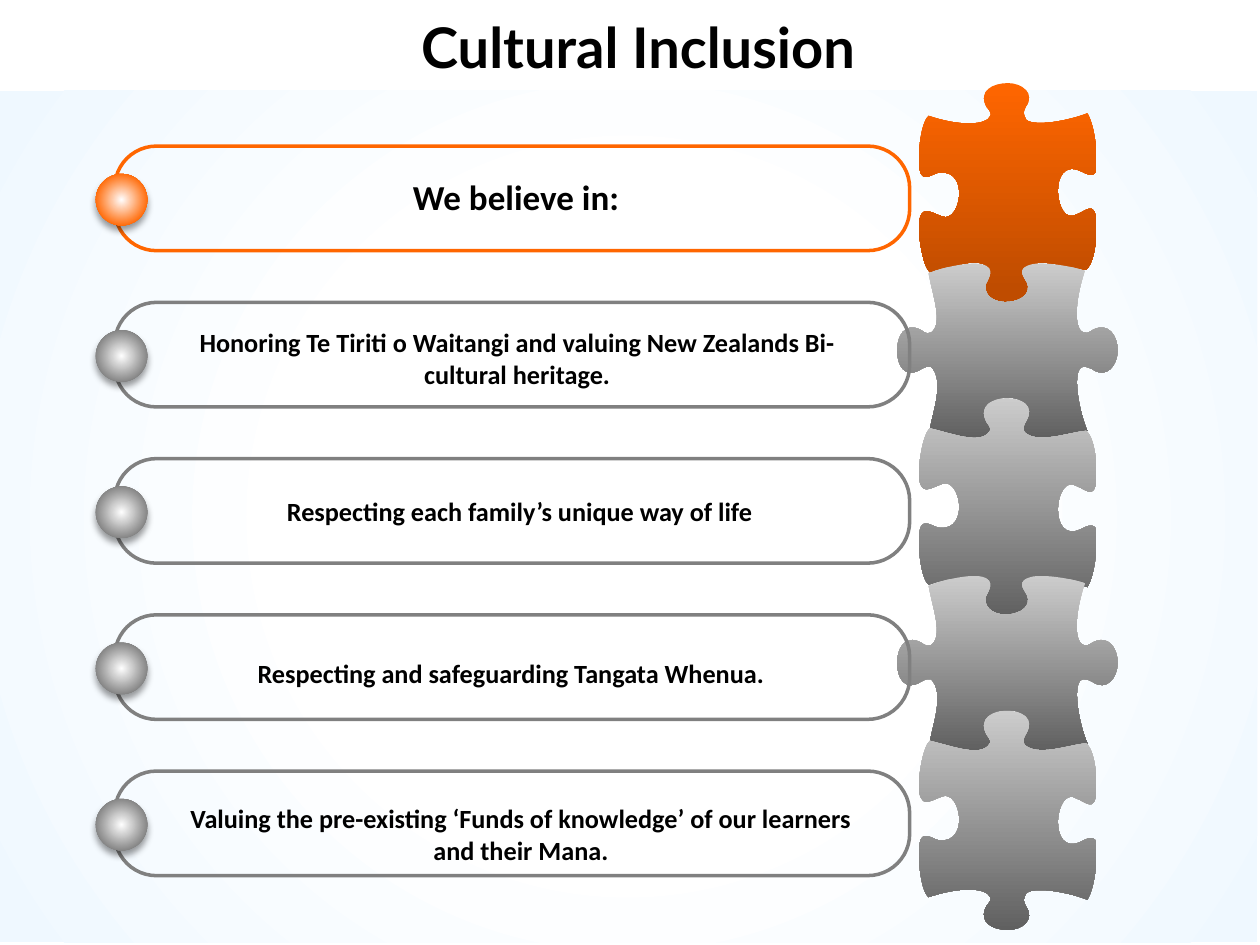
import pptx
import pptx.util
import pptx.oxml
import pptx.oxml.ns
import pptx.dml.color
import pptx.enum.shapes
import pptx.enum.text

KIND = pptx.enum.shapes.MSO_SHAPE
NS = 'xmlns:a="http://schemas.openxmlformats.org/drawingml/2006/main"'
ORANGE, GRAY = "FF6600", "808080"
PITCH = 1.24  # inches between rows

TITLE = "Cultural Inclusion"
# text, size, accent, text box left, top, height (inches)
ROWS = [
    ("We believe in:", 20, ORANGE, 1.19, 1.34, 0.44),
    ("Honoring Te Tiriti o Waitangi and valuing New Zealands Bi-cultural heritage.",
     15, GRAY, 1.2, 2.54, 0.61),
    ("Respecting each family’s unique way of life", 15, GRAY, 1.22, 3.88, 0.35),
    ("Respecting and safeguarding Tangata Whenua.", 15, GRAY, 1.15, 5.17, 0.61),
    ("Valuing the pre-existing ‘Funds of knowledge’ of our learners and their Mana.",
     15, GRAY, 1.23, 6.32, 0.61),
]

# Puzzle outlines: a closed chain, one Bezier curve a line (inches)
TALL = [
    (8.11, 4.9, 8.22, 4.82, 8.14, 4.71),
    (8.13, 4.69, 8.12, 4.67, 8.13, 4.64),
    (8.13, 4.54, 8.45, 4.59, 8.63, 4.66),
    (8.69, 4.56, 8.71, 4.34, 8.7, 4.25),
    (8.71, 4.17, 8.67, 4.15, 8.58, 4.2),
    (8.31, 4.33, 8.37, 3.74, 8.55, 3.86),
    (8.61, 3.88, 8.69, 3.97, 8.7, 3.81),
    (8.71, 3.76, 8.7, 3.48, 8.62, 3.42),
    (8.49, 3.43, 8.23, 3.53, 8.13, 3.43),
    (8.12, 3.41, 8.12, 3.38, 8.14, 3.35),
    (8.22, 3.22, 8.11, 3.16, 7.99, 3.16),
    (7.88, 3.16, 7.76, 3.22, 7.83, 3.35),
    (7.86, 3.39, 7.87, 3.41, 7.85, 3.43),
    (7.78, 3.53, 7.55, 3.44, 7.38, 3.4),
    (7.32, 3.45, 7.29, 3.7, 7.29, 3.77),
    (7.31, 3.94, 7.37, 3.88, 7.48, 3.84),
    (7.62, 3.79, 7.7, 4.21, 7.46, 4.19),
    (7.41, 4.19, 7.32, 4.1, 7.3, 4.21),
    (7.28, 4.28, 7.3, 4.58, 7.37, 4.64),
    (7.64, 4.55, 7.83, 4.57, 7.86, 4.64),
    (7.87, 4.65, 7.86, 4.68, 7.83, 4.71),
    (7.76, 4.84, 7.88, 4.9, 8, 4.9),
]
WIDE = [
    (8.87, 2.9, 8.78, 3.01, 8.67, 2.93),
    (8.65, 2.92, 8.63, 2.91, 8.6, 2.91),
    (8.5, 2.91, 8.56, 3.26, 8.63, 3.42),
    (8.54, 3.43, 8.33, 3.49, 8.23, 3.48),
    (8.17, 3.47, 8.08, 3.43, 8.14, 3.35),
    (8.28, 3.09, 7.74, 3.1, 7.82, 3.32),
    (7.86, 3.4, 7.91, 3.44, 7.76, 3.48),
    (7.69, 3.49, 7.47, 3.42, 7.38, 3.41),
    (7.4, 3.28, 7.5, 3.02, 7.39, 2.91),
    (7.37, 2.9, 7.35, 2.91, 7.31, 2.93),
    (7.18, 3.01, 7.12, 2.9, 7.12, 2.78),
    (7.12, 2.67, 7.18, 2.55, 7.31, 2.62),
    (7.35, 2.65, 7.37, 2.65, 7.39, 2.64),
    (7.49, 2.57, 7.4, 2.34, 7.37, 2.17),
    (7.45, 2.13, 7.64, 2.09, 7.74, 2.09),
    (7.91, 2.1, 7.86, 2.19, 7.82, 2.26),
    (7.8, 2.47, 8.23, 2.42, 8.15, 2.24),
    (8.12, 2.19, 8.07, 2.13, 8.18, 2.1),
    (8.28, 2.07, 8.54, 2.12, 8.61, 2.15),
    (8.52, 2.42, 8.53, 2.62, 8.6, 2.64),
    (8.62, 2.65, 8.64, 2.64, 8.67, 2.62),
    (8.8, 2.55, 8.87, 2.67, 8.87, 2.78),
]
FLAME = [(0, ORANGE), (94, "BF4C00"), (100, "BF4C00")]
STEEL = [(0, "CCCCCC"), (100, "606060")]
# outline, vertical direction, vertical shift, gradient
PARTS = [
    (TALL, -1, 5.56, FLAME),
    (WIDE, 1, 0, STEEL),
    (TALL, 1, 0, STEEL),
    (WIDE, 1, 2 * PITCH, STEEL),
    (TALL, 1, 2 * PITCH, STEEL),
]


def size(inch):
    return pptx.util.Cm(inch * 2.54)


def paint(code):
    return pptx.dml.color.RGBColor.from_string(code)


def blend(shape, stops, round_=False):
    """Fill with a gradient, from the top down or from the centre out."""
    marks = "".join(f'<a:gs pos="{pos * 1000}"><a:srgbClr val="{code}"/></a:gs>'
                    for pos, code in stops)
    way = ('<a:path path="circle"><a:fillToRect l="50000" t="50000" r="50000" b="50000"/></a:path>'
           if round_ else '<a:lin ang="5400000" scaled="0"/>')
    shape.fill.background()
    prop = shape._element.spPr
    prop.replace(prop.find(pptx.oxml.ns.qn("a:noFill")), pptx.oxml.parse_xml(
        f'<a:gradFill {NS} rotWithShape="0"><a:gsLst>{marks}</a:gsLst>{way}</a:gradFill>'))


def shade(shape):
    """Add a soft shadow below the shape."""
    glow = shape._element.spPr.find(pptx.oxml.ns.qn("a:effectLst"))
    glow.append(pptx.oxml.parse_xml(
        f'<a:outerShdw {NS} blurRad="50800" dist="38100" dir="5400000" rotWithShape="0">'
        '<a:srgbClr val="000000"><a:alpha val="40000"/></a:srgbClr></a:outerShdw>'))


def block(home, kind, *box):
    shape = home.add_shape(kind, *map(size, box))
    shape.shadow.inherit = False
    shape.line.fill.background()
    return shape


def write(home, text, points, face, *box):
    frame = home.add_textbox(*map(size, box)).text_frame
    frame.word_wrap = True
    para = frame.paragraphs[0]
    para.text = text
    para.alignment = pptx.enum.text.PP_ALIGN.CENTER
    font = para.font
    font.size, font.name, font.bold = pptx.util.Pt(points), face, True
    font.color.rgb = paint("000000")


def bend(shape, curves):
    """Turn each straight side of a freeform into its Bezier curve."""
    sides = list(shape._element.iter(pptx.oxml.ns.qn("a:lnTo")))
    for side, curve in zip(sides, curves):
        spots = "".join(f'<a:pt x="{x - shape.left}" y="{y - shape.top}"/>' for x, y in curve)
        side.getparent().replace(side, pptx.oxml.parse_xml(
            f'<a:cubicBezTo {NS}>{spots}</a:cubicBezTo>'))


def piece(home, form, turn, shift, stops):
    curves = [[(size(x), size(turn * y + shift)) for x, y in zip(line[::2], line[1::2])]
              for line in form]
    ends = [curve[-1] for curve in curves]
    pen = home.build_freeform(*ends[-1])
    pen.add_line_segments(ends, close=True)
    shape = pen.convert_to_shape()
    bend(shape, curves)
    shape.shadow.inherit = False
    shape.line.fill.background()
    blend(shape, stops)


def row(home, top, text, points, tint, left, head, high):
    frame = block(home, KIND.ROUNDED_RECTANGLE, 0.91, top, 6.31, 0.83)
    frame.adjustments[0] = 0.4
    frame.fill.background()
    frame.line.color.rgb = paint(tint)
    frame.line.width = pptx.util.Pt(2)
    ball = block(home, KIND.OVAL, 0.76, top + 0.22, 0.41, 0.41)
    blend(ball, [(0, "FFFFFF"), (75, tint), (100, tint)], True)
    shade(ball)
    write(home, text, points, "Calibri", left, head, 5.81, high)


def main():
    deck = pptx.Presentation()
    deck.slide_width, deck.slide_height = size(10), size(7.5)
    art = deck.slides.add_slide(deck.slide_layouts[6]).shapes
    back = block(art, KIND.RECTANGLE, -0.02, 0.72, 10, 6.76)
    blend(back, [(0, "FFFFFF"), (43, "FFFFFF"), (100, "EFF8FF")], True)
    tower = art.add_group_shape().shapes
    for part in PARTS:
        piece(tower, *part)
    write(art, TITLE, 32, "Lato", 0.19, 0.05, 9.75, 0.64)
    for i, data in enumerate(ROWS):
        row(art.add_group_shape().shapes, 1.16 + i * PITCH, *data)
    deck.save("out.pptx")


if __name__ == "__main__":
    main()
